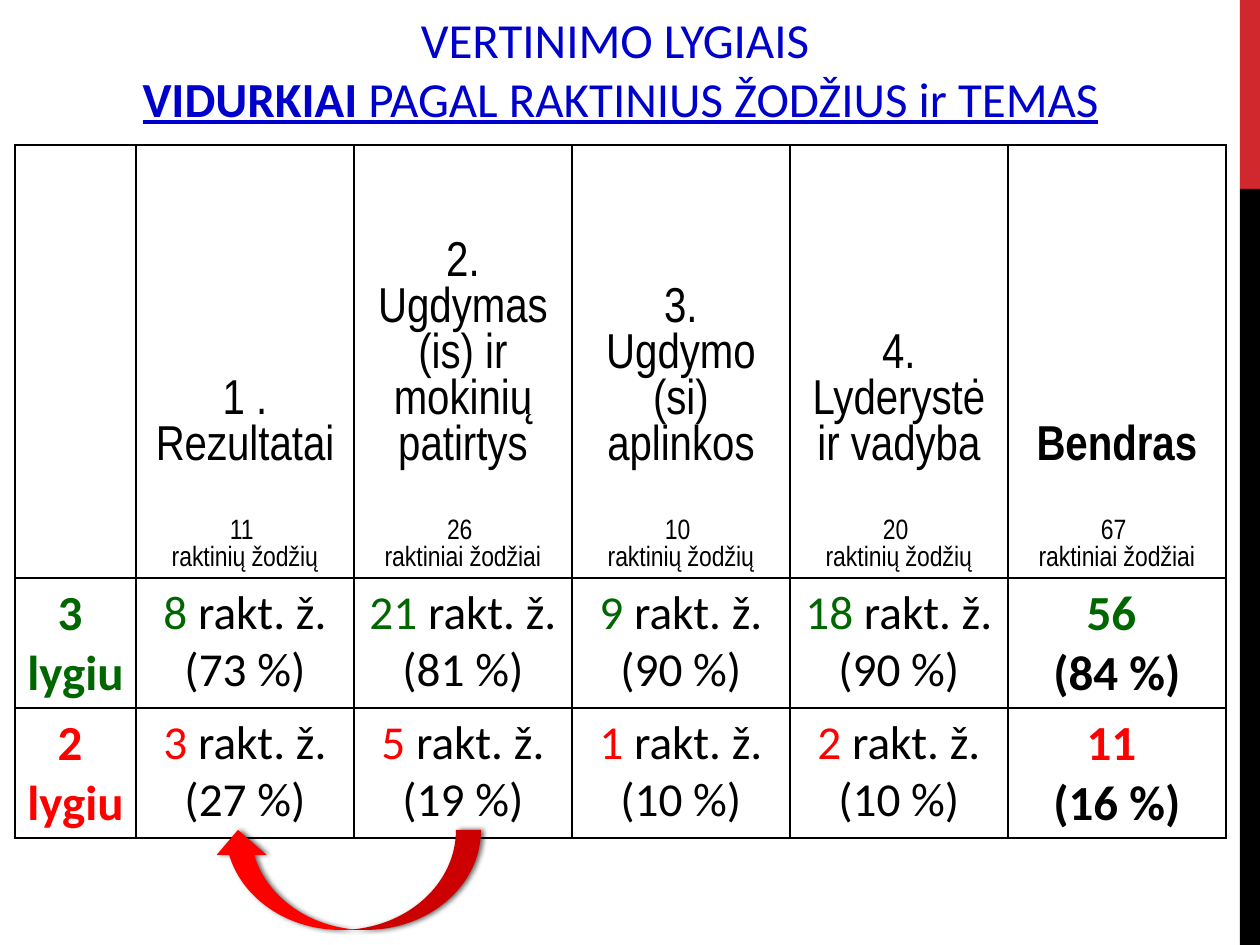
"""Build a slide with a table of keyword counts by evaluation level and topic."""
from lxml.etree import SubElement
from pptx import Presentation
from pptx.dml.color import RGBColor
from pptx.enum.shapes import MSO_SHAPE
from pptx.enum.text import MSO_ANCHOR, MSO_AUTO_SIZE, PP_ALIGN
from pptx.oxml import parse_xml
from pptx.oxml.ns import nsdecls, qn
from pptx.util import Pt

PX = 914400 // 126
BLUE, GREEN, RED, BLACK = "0000CC", "006600", "FF0000", "000000"


def color(value):
    return RGBColor.from_string(value)


def write(frame, paragraphs, font_name):
    for index, runs in enumerate(paragraphs):
        paragraph = frame.paragraphs[0] if index == 0 else frame.add_paragraph()
        paragraph.alignment = PP_ALIGN.CENTER
        paragraph.line_spacing = 1.0
        paragraph.space_before = Pt(0)
        for text, size, fill, styles in runs:
            run = paragraph.add_run()
            run.text = text
            formats = {"name": font_name, "size": Pt(size), "bold": False, **styles}
            for name, value in formats.items():
                setattr(run.font, name, value)
            run.font.color.rgb = color(fill)


presentation = Presentation()
presentation.slide_width, presentation.slide_height = 1260 * PX, 945 * PX
slide = presentation.slides.add_slide(presentation.slide_layouts[5])

for top, height, fill in [(0, 189, "D1282E"), (189, 756, BLACK)]:
    bar = slide.shapes.add_shape(
        MSO_SHAPE.RECTANGLE, 1240 * PX, top * PX, 20 * PX, height * PX)
    bar.shadow.inherit = False
    bar.fill.solid()
    bar.fill.fore_color.rgb = color(fill)
    bar.line.fill.background()

bold, underline = {"bold": True}, {"underline": True}
title = slide.shapes.title
title.left, title.top, title.width, title.height = 15 * PX, 3 * PX, 1211 * PX, 130 * PX
title.text_frame.word_wrap = True
title.text_frame.auto_size = MSO_AUTO_SIZE.NONE
title.text_frame.vertical_anchor = MSO_ANCHOR.TOP
write(title.text_frame, [
    [("VERTINIMO LYGIAIS ", 28, BLUE, {})],
    [("VIDURKIAI", 28, BLUE, {**bold, **underline}),
     (" PAGAL RAKTINIUS ŽODŽIUS ir TEMAS", 28, BLUE, underline)],
], "Calibri")

topics = [
    ("1 . Rezultatai", "11 ", "raktinių žodžių"),
    ("2. Ugdymas (is) ir mokinių patirtys", "26 ", "raktiniai žodžiai"),
    ("3. Ugdymo (si) aplinkos", "10 ", "raktinių žodžių"),
    ("4. Lyderystė ir vadyba", "20 ", "raktinių žodžių"),
    ("Bendras", "67 ", "raktiniai žodžiai"),
]
levels = [
    ("3 ", GREEN, [("8", 73), ("21", 81), ("9", 90), ("18", 90), ("56 ", 84)]),
    ("2 ", RED, [("3", 27), ("5", 19), ("1", 10), ("2", 10), ("11 ", 16)]),
]
column_widths = [121] + [218] * 5
row_heights = [433, 130, 130]
table = slide.shapes.add_table(
    3, 6, 15 * PX, 145 * PX, sum(column_widths) * PX, sum(row_heights) * PX).table
table.first_row = table.horz_banding = False
for column, width in zip(table.columns, column_widths):
    column.width = width * PX
for row, height in zip(table.rows, row_heights):
    row.height = height * PX

for row_index, row in enumerate(table.rows):
    for index, cell in enumerate(row.cells):
        cell.margin_left = cell.margin_right = (14 if index else 8) * PX
        cell.margin_bottom = (3 if row_index else 6) * PX
        properties = cell._tc.get_or_add_tcPr()
        for side in ("lnL", "lnR", "lnT", "lnB"):
            properties.append(parse_xml(
                f'<a:{side} {nsdecls("a")} w="12700"><a:solidFill>'
                f'<a:srgbClr val="{BLACK}"/></a:solidFill></a:{side}>'))
        cell.fill.background()

for column, (topic, count, unit) in enumerate(topics, 1):
    cell = table.cell(0, column)
    cell.vertical_anchor = MSO_ANCHOR.BOTTOM
    write(cell.text_frame, [
        [(topic, 28, BLACK, bold if column == 5 else {})],
        [(count, 16, BLACK, {})],
        [(unit, 16, BLACK, {})],
    ], "Arial Narrow")
    cell.text_frame.paragraphs[0].space_after = Pt(28)

for row, (level, accent, results) in enumerate(levels, 1):
    write(table.cell(row, 0).text_frame, [
        [(level, 28, accent, bold)], [("lygiu", 28, accent, bold)]], "Calibri")
    for column, (count, percent) in enumerate(results, 1):
        size, style = (28, bold) if column == 5 else (27, {})
        first_line = [(count, size, accent, style)]
        if column < 5:
            first_line.append((" rakt. ž.", size, BLACK, style))
        write(table.cell(row, column).text_frame, [
            first_line, [(f"({percent} %)", size, BLACK, style)]], "Calibri")

arrow = slide.shapes.add_shape(
    MSO_SHAPE.CURVED_LEFT_ARROW, 297 * PX, 746 * PX, 100 * PX, 268 * PX)
arrow.rotation = 90
arrow.fill.solid()
arrow.fill.fore_color.rgb = color(RED)
arrow.line.fill.background()
arrow.shadow.inherit = False
effects = arrow._element.spPr.find(qn("a:effectLst"))
shadow = SubElement(effects, qn("a:outerShdw"), blurRad="38100", dist="19050", dir="0")
shadow_color = SubElement(shadow, qn("a:srgbClr"), val=BLACK)
SubElement(shadow_color, qn("a:alpha"), val="60000")

presentation.save("out.pptx")
